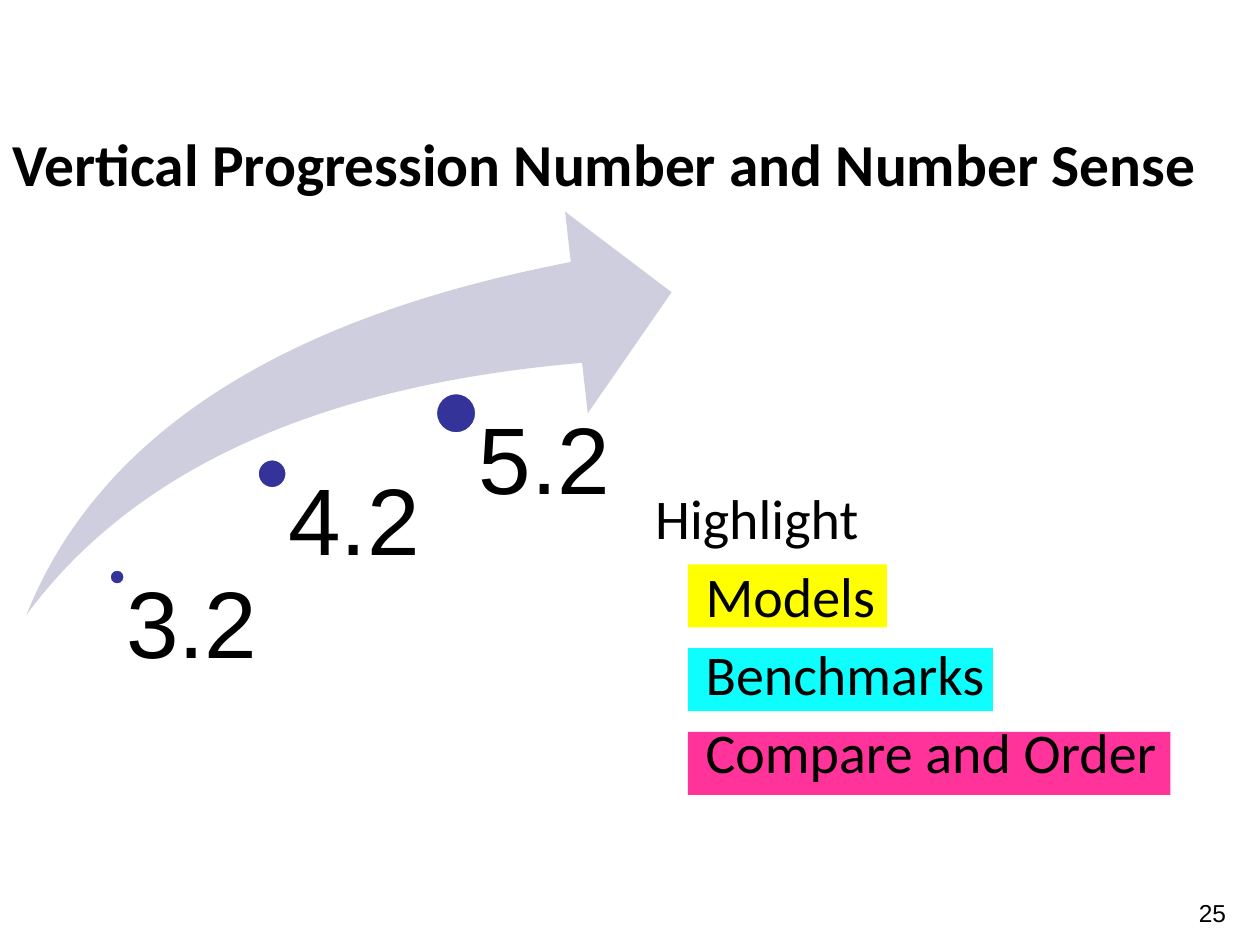
import lxml.etree
import pptx
import pptx.dml.color
import pptx.enum.shapes
import pptx.enum.text
import pptx.oxml.ns
import pptx.util
from dataclasses import dataclass

SHAPE = pptx.enum.shapes.MSO_SHAPE
ALIGN = pptx.enum.text.PP_ALIGN
ANCHOR = pptx.enum.text.MSO_ANCHOR


@dataclass(frozen=True)
class Theme:
    text: str = "000000"
    paper: str = "FFFFFF"
    swoosh: str = "CECEDE"
    dot: str = "333399"
    yellow: str = "FFFF00"
    cyan: str = "0EFDFD"
    pink: str = "FF3399"
    heading_font: str = "Calibri"
    label_font: str = "Arial"
    title_size: int = 34
    list_size: int = 32
    grade_size: int = 54
    number_size: int = 14


class SlideBuilder:
    """Places elements on a grid of 100 columns by 75 rows."""

    def __init__(self, presentation, theme):
        self.theme = theme
        self.column = presentation.slide_width / 100
        self.row = presentation.slide_height / 75
        self.slide = presentation.slides.add_slide(presentation.slide_layouts[1])

    def box(self, left, top, width, height):
        return (int(left * self.column), int(top * self.row),
                int(width * self.column), int(height * self.row))

    def rgb(self, value):
        return pptx.dml.color.RGBColor.from_string(value)

    def styled_run(self, paragraph, text, size, font, bold=False):
        run = paragraph.add_run()
        run.text = text
        run.font.size = pptx.util.Pt(size)
        run.font.name = font
        run.font.bold = bold
        run.font.color.rgb = self.rgb(self.theme.text)

    def shape(self, kind, area, fill, outline=None):
        shape = self.slide.shapes.add_shape(kind, *self.box(*area))
        shape.shadow.inherit = False
        shape.fill.solid()
        shape.fill.fore_color.rgb = self.rgb(fill)
        if outline:
            shape.line.color.rgb = self.rgb(outline)
            shape.line.width = pptx.util.Pt(2)
        else:
            shape.line.fill.background()
        return shape

    def placeholder(self, holder, area, anchor):
        holder.left, holder.top, holder.width, holder.height = self.box(*area)
        # Bring the text in front of the shapes drawn so far
        self.slide.shapes.element.append(holder.element)
        frame = holder.text_frame
        frame.word_wrap = True
        frame.auto_size = pptx.enum.text.MSO_AUTO_SIZE.NONE
        frame.vertical_anchor = anchor
        return frame

    def title(self, text, area):
        frame = self.placeholder(self.slide.shapes.title, area, ANCHOR.MIDDLE)
        heading = frame.paragraphs[0]
        heading.alignment = ALIGN.LEFT
        self.styled_run(heading, text, self.theme.title_size,
                        self.theme.heading_font, True)

    def body(self, lines, area):
        frame = self.placeholder(self.slide.placeholders[1], area, ANCHOR.TOP)
        for index, (text, indent) in enumerate(lines):
            line = frame.add_paragraph() if index else frame.paragraphs[0]
            properties = line._p.get_or_add_pPr()
            properties.set("marL", str(int(indent * self.column)))
            properties.set("indent", "0")
            lxml.etree.SubElement(properties, pptx.oxml.ns.qn("a:buNone"))
            line.space_before = pptx.util.Pt(6 if index else 0)
            self.styled_run(line, text, self.theme.list_size, self.theme.heading_font)

    def label(self, text, area, size, align=ALIGN.LEFT, inset=None, spacing=1.0):
        frame = self.slide.shapes.add_textbox(*self.box(*area)).text_frame
        frame.word_wrap = True
        if inset is not None:
            frame.margin_left = int(inset * self.column)
            frame.margin_top = frame.margin_right = frame.margin_bottom = 0
        line = frame.paragraphs[0]
        line.alignment = align
        line.line_spacing = spacing
        self.styled_run(line, text, size, self.theme.label_font)

    def milestone(self, text, x, y, diameter, width, floor):
        corner = (x - diameter / 2, y - diameter / 2)
        self.shape(SHAPE.OVAL, (*corner, diameter, diameter),
                   self.theme.dot, self.theme.paper)
        self.label(text, (x, y, width, floor - y), self.theme.grade_size,
                   inset=diameter * 0.54, spacing=0.9)


def main():
    presentation = pptx.Presentation()
    presentation.slide_width = pptx.util.Inches(10)
    presentation.slide_height = pptx.util.Inches(7.5)
    theme = Theme()
    page = SlideBuilder(presentation, theme)

    # Highlight bars behind the list
    topics = [("Models", 15.8, theme.yellow),
              ("Benchmarks", 24.2, theme.cyan),
              ("Compare and Order", 38.3, theme.pink)]
    for index, (_, width, colour) in enumerate(topics):
        page.shape(SHAPE.RECTANGLE, (54.6, 44.8 + 6.65 * index, width, 5), colour)

    # Title, list and slide number
    page.title("Vertical Progression Number and Number Sense", (0, 6.7, 100, 12.5))
    lines = [("Highlight", 6)] + [(topic, 10) for topic, _, _ in topics]
    page.body(lines, (45, 37.9, 48.3, 34.2))
    page.label("25", (75, 70.8, 23.3, 5.2), theme.number_size, ALIGN.RIGHT)

    # Rising arrow with the three grade standards
    swoosh = page.shape(SHAPE.SWOOSH_ARROW, (2.1, 16.8, 51.2, 32), theme.swoosh)
    swoosh.adjustments[0] = 0.25
    swoosh.adjustments[1] = 0.25
    for text, x, y, diameter, width in [("3.2", 9.3, 45.8, 1.3, 11.9),
                                        ("4.2", 21.6, 37.6, 2.4, 12.3),
                                        ("5.2", 36.2, 32.8, 3.3, 12.3)]:
        page.milestone(text, x, y, diameter, width, floor=55)

    presentation.save("out.pptx")


if __name__ == "__main__":
    main()
